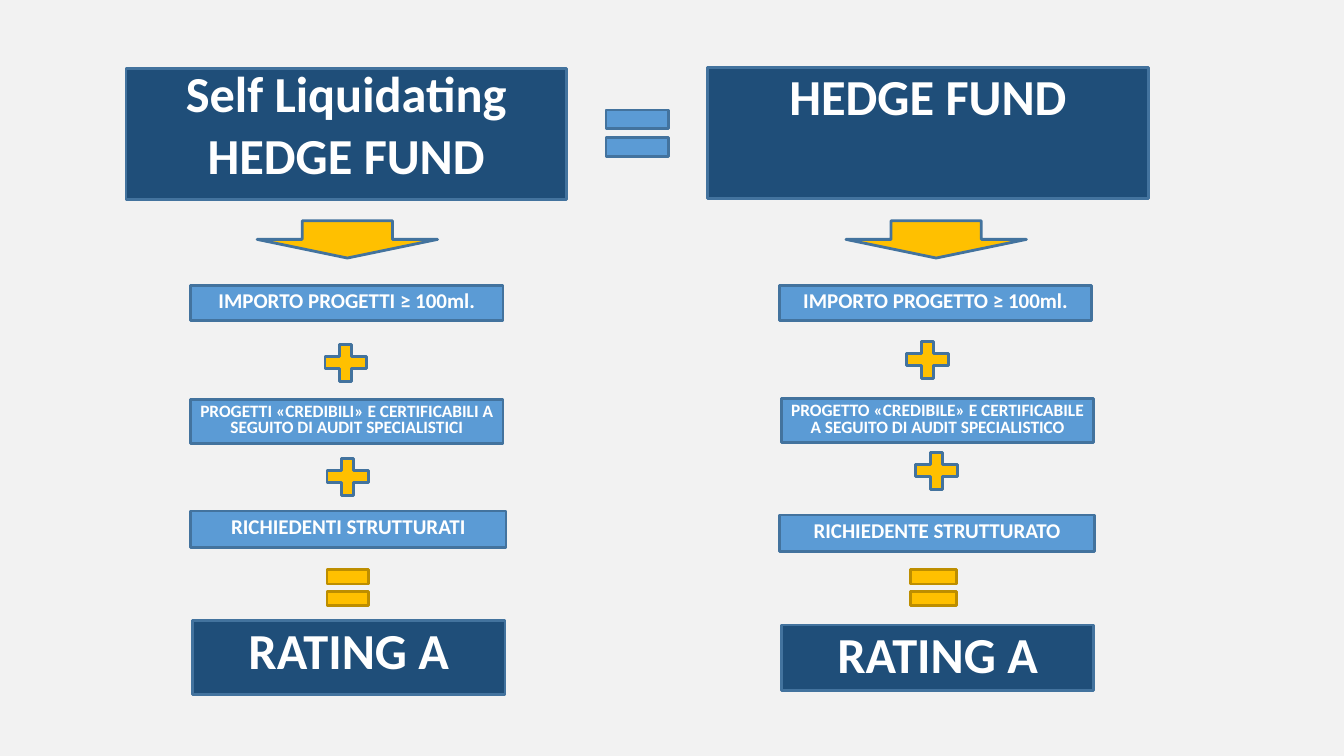
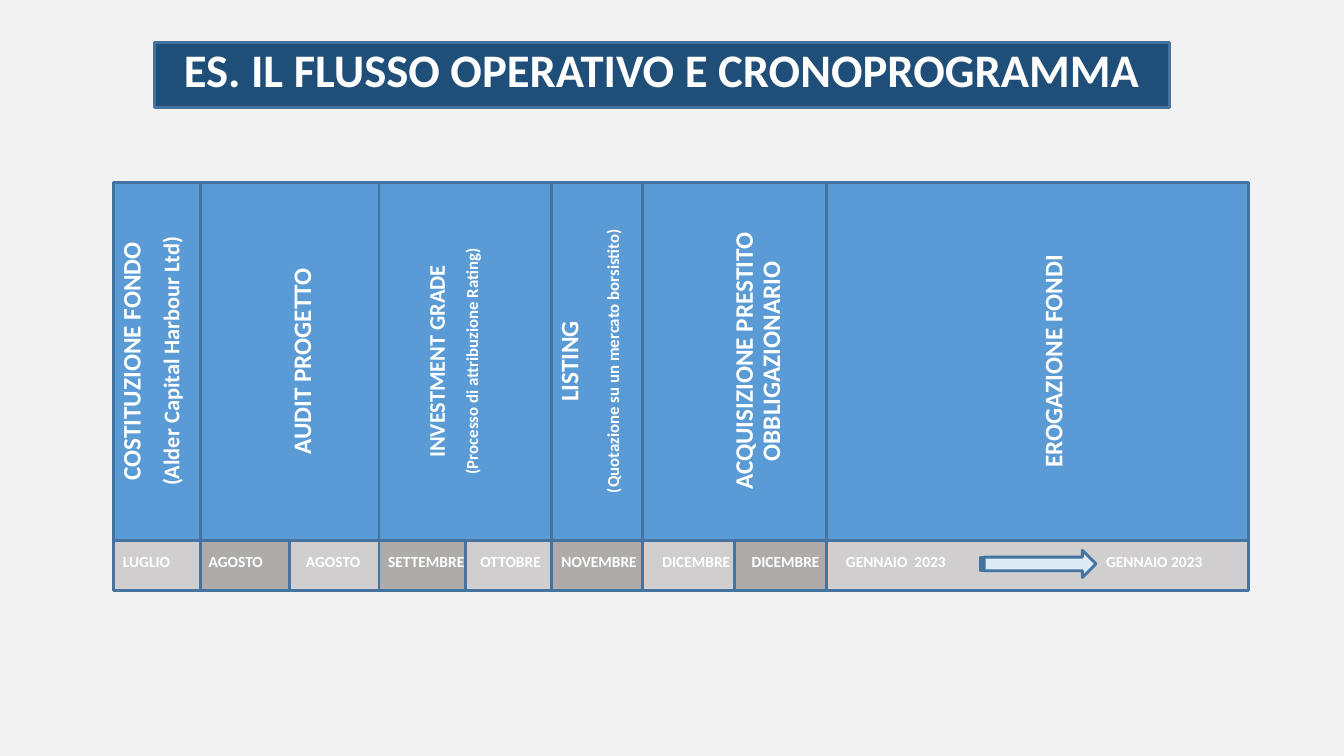
from itertools import count

from lxml.etree import SubElement
from pptx import Presentation
from pptx.dml.color import RGBColor
from pptx.enum.shapes import MSO_SHAPE
from pptx.enum.text import MSO_ANCHOR, MSO_AUTO_SIZE, PP_ALIGN
from pptx.oxml.ns import qn
from pptx.util import Inches, Pt

FONT = "Calibri"
BACKGROUND, WHITE = "F2F2F2", "FFFFFF"
NAVY, BLUE, OUTLINE = "1F4E79", "5B9BD5", "43739E"
GOLD, DARK_GOLD, PALE_BLUE = "FFC000", "BD8E00", "DEEBF7"
MONTH_FILLS = ("D0CECE", "AFABAB")
TITLE_ONLY, BLANK = 5, 6

FUNDS = [
    {
        "heading": (["Self Liquidating", "HEDGE FUND"], (1.25, 0.68, 4.37, 1.3), 0.8),
        "box": (1.89, 2.19, 3.1, 4.7),
        "steps": [
            ("IMPORTO PROGETTI ≥ 100ml.", 0, 0.64),
            ("PROGETTI «CREDIBILI» E CERTIFICABILI A SEGUITO DI AUDIT SPECIALISTICI", 0, 1.77),
            ("RICHIEDENTI STRUTTURATI", 0, 2.88),
        ],
        "pluses": [(1.26, 1.16), (1.28, 2.29)],
        "equal": (1.28, 0.56),
        "rating_height": 0.73,
    },
    {
        "heading": (["HEDGE FUND"], (7.02, 0.67, 4.37, 1.3), 0.9),
        "box": (7.73, 2.19, 3.1, 4.66),
        "steps": [
            ("IMPORTO PROGETTO ≥ 100ml.", 0, 0.64),
            ("PROGETTO «CREDIBILE» E CERTIFICABILE A SEGUITO DI AUDIT SPECIALISTICO", 0.02, 1.76),
            ("RICHIEDENTE STRUTTURATO", 0, 2.92),
        ],
        "pluses": [(1.19, 1.13), (1.28, 2.23)],
        "equal": (1.22, 0.62),
        "rating_height": 0.65,
    },
]
STEP_STYLES = [(3.1, 0.35, 15, 0.9), (3.1, 0.44, 12.4, 0.8), (3.13, 0.36, 15, 0.9)]

PHASES = [
    (0.86, 0.05, 10, [("COSTITUZIONE FONDO", 18), ("(Alder Capital Harbour Ltd)", 16)],
     [("LUGLIO", 0.09)]),
    (1.77, 0.88, 10, [("AUDIT PROGETTO", 18)], [("AGOSTO", 0.08), ("AGOSTO", 0.16)]),
    (1.71, 0.46, 10, [("INVESTMENT GRADE", 16), ("(Processo di attribuzione Rating)", 12)],
     [("SETTEMBRE", 0.09), ("OTTOBRE", 0.15)]),
    (0.9, 0.05, 15, [("LISTING", 18), ("(Quotazione su un mercato borsistito)", 12)],
     [("NOVEMBRE", 0.1)]),
    (1.83, 0.88, 10, [("ACQUISIZIONE PRESTITO OBBLIGAZIONARIO", 18)],
     [("DICEMBRE", 0.2), ("DICEMBRE", 0.17)]),
    (4.18, 2.12, 10, [("EROGAZIONE FONDI", 18)], [("GENNAIO  2023\tGENNAIO 2023", 0.19)]),
]


def color(value):
    """Turn a hex string into a colour."""
    return RGBColor.from_string(value)


def paint(shape, fill, line=OUTLINE):
    """Give a shape its fill and outline."""
    shape.shadow.inherit = False
    shape.fill.solid()
    shape.fill.fore_color.rgb = color(fill)
    shape.line.color.rgb = color(line)
    shape.line.width = Pt(2)


def add_box(slide, kind, box, fill, line=OUTLINE):
    """Add a painted preset shape."""
    shape = slide.shapes.add_shape(kind, *map(Inches, box))
    paint(shape, fill, line)
    return shape


def write(shape, lines, align=PP_ALIGN.CENTER, spacing=0.9, before=10):
    """Write bold white paragraphs, given as (text, size), from the top of a shape."""
    frame = shape.text_frame
    frame.word_wrap = True
    frame.auto_size = MSO_AUTO_SIZE.NONE
    frame.vertical_anchor = MSO_ANCHOR.TOP
    for index, (text, size) in enumerate(lines):
        paragraph = frame.add_paragraph() if index else frame.paragraphs[0]
        paragraph.text = text
        paragraph.alignment = align
        paragraph.line_spacing = spacing
        paragraph.space_before = Pt(before)
        font = paragraph.font
        font.name, font.size, font.bold = FONT, Pt(size), True
        font.color.rgb = color(WHITE)
    return frame


def add_tab_stop(paragraph, position):
    """Set one left tab stop on a formatted paragraph."""
    properties = paragraph._p.get_or_add_pPr()
    tab_list = SubElement(properties, qn("a:tabLst"))
    SubElement(tab_list, qn("a:tab"), pos=str(Inches(position)), algn="l")
    properties.insert(len(properties) - 2, tab_list)


def draw_fund(slide, heading, box, steps, pluses, equal, rating_height):
    """Draw a fund heading and the requirements that add up to its rating."""
    left, top, width, height = box
    lines, heading_box, spacing = heading
    write(add_box(slide, MSO_SHAPE.RECTANGLE, heading_box, NAVY),
          [(line, 36) for line in lines], spacing=spacing)
    add_box(slide, MSO_SHAPE.DOWN_ARROW, (left + 0.66, top, 1.79, 0.37), GOLD)
    for (text, across, down), (step_width, step_height, size, spacing) in zip(steps, STEP_STYLES):
        step_box = (left + across, top + down, step_width, step_height)
        step = add_box(slide, MSO_SHAPE.RECTANGLE, step_box, BLUE)
        frame = write(step, [(text, size)], spacing=spacing)
        frame.margin_left = frame.margin_right = Inches(0.07)
    for across, down in pluses:
        add_box(slide, MSO_SHAPE.MATH_PLUS, (left + across, top + down, 0.56, 0.5), GOLD)
    across, equal_width = equal
    add_box(slide, MSO_SHAPE.MATH_EQUAL, (left + across, top + 3.34, equal_width, 0.6),
            GOLD, DARK_GOLD)
    rating_box = (left + 0.02, top + height - rating_height, width, rating_height)
    write(add_box(slide, MSO_SHAPE.RECTANGLE, rating_box, NAVY), [("RATING A", 36)])


def draw_phase(slide, box, inset, gap, lines):
    """Draw a timeline phase whose text reads upwards."""
    left, top, width, height = box
    turned_box = (left + (width - height) / 2, top + (height - width) / 2, height, width)
    shape = add_box(slide, MSO_SHAPE.RECTANGLE, turned_box, BLUE)
    shape.rotation = 270
    write(shape, lines, before=gap).margin_top = Inches(inset)


def draw_month(slide, box, text, inset, fill):
    """Draw a month cell under its phase."""
    shape = add_box(slide, MSO_SHAPE.RECTANGLE, box, fill)
    frame = write(shape, [(text, 11)], PP_ALIGN.LEFT, 1.0, 0)
    frame.margin_left, frame.margin_right = Inches(inset), 0
    frame.margin_top = Inches(0.12)
    if "\t" in text:
        add_tab_stop(frame.paragraphs[0], 2.58)


def draw_timeline(slide, left, top, phase_height, month_height):
    """Draw the phases side by side, each split equally into its months."""
    month_top = top + phase_height
    month_number = count()
    for width, inset, gap, lines, months in PHASES:
        draw_phase(slide, (left, top, width, phase_height), inset, gap, lines)
        month_width = width / len(months)
        for index, (text, month_inset) in enumerate(months):
            month_box = (left + index * month_width, month_top, month_width, month_height)
            fill = MONTH_FILLS[next(month_number) % 2]
            draw_month(slide, month_box, text, month_inset, fill)
        left += width
    add_box(slide, MSO_SHAPE.STRIPED_RIGHT_ARROW,
            (left - 2.66, month_top + 0.1, 1.15, 0.27), PALE_BLUE)


def build_comparison(presentation):
    """Build the slide that compares the two funds."""
    slide = presentation.slides.add_slide(presentation.slide_layouts[BLANK])
    for fund in FUNDS:
        draw_fund(slide, **fund)
    add_box(slide, MSO_SHAPE.MATH_EQUAL, (5.9, 0.93, 0.84, 0.78), BLUE)


def build_schedule(presentation):
    """Build the slide with the operating schedule."""
    slide = presentation.slides.add_slide(presentation.slide_layouts[TITLE_ONLY])
    title = slide.shapes.title
    title.left, title.top, title.width, title.height = map(Inches, (1.53, 0.42, 10.07, 0.65))
    paint(title, NAVY)
    write(title, [("ES. IL FLUSSO OPERATIVO E CRONOPROGRAMMA", 33.3)])
    draw_timeline(slide, 1.13, 1.81, 3.55, 0.5)


def main():
    """Build and save the presentation."""
    presentation = Presentation()
    presentation.slide_width, presentation.slide_height = Inches(13.33), Inches(7.5)
    background = presentation.slide_master.background.fill
    background.solid()
    background.fore_color.rgb = color(BACKGROUND)
    build_comparison(presentation)
    build_schedule(presentation)
    presentation.save("out.pptx")


if __name__ == "__main__":
    main()
